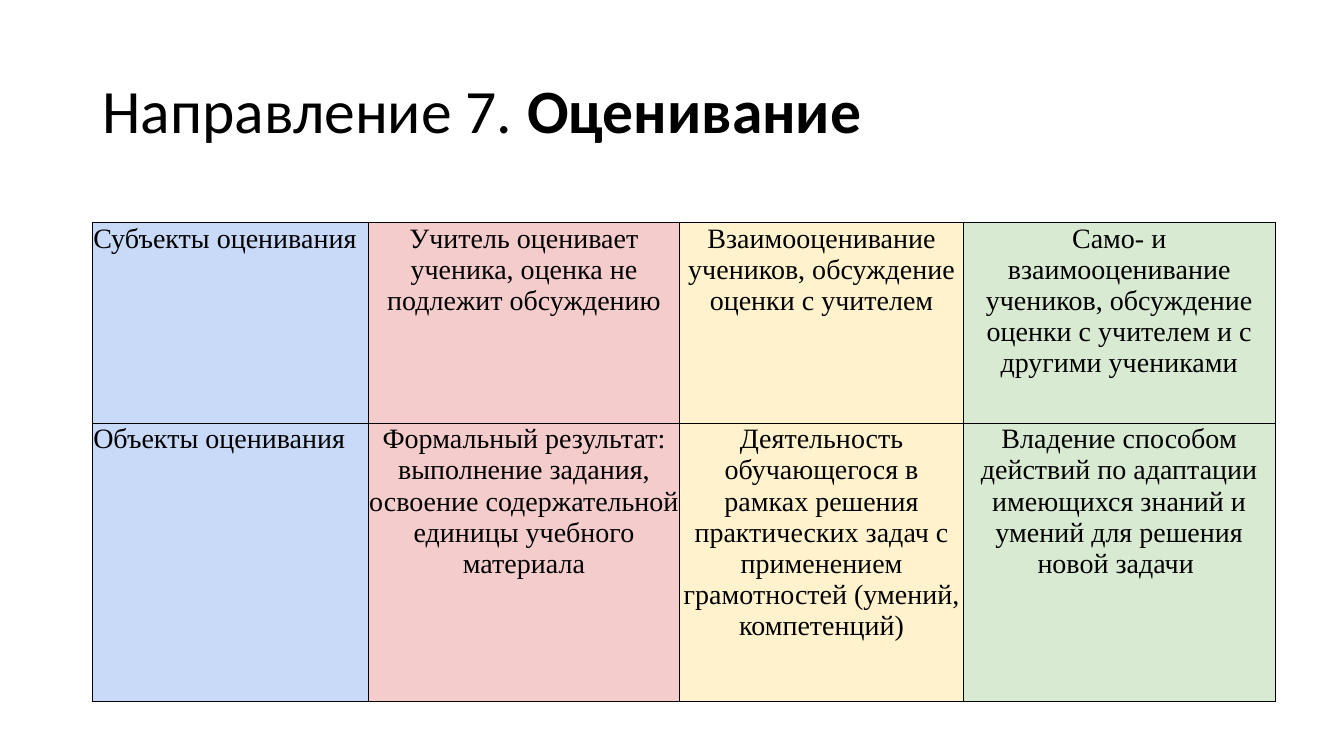
from lxml.etree import SubElement
from pptx import Presentation
from pptx.dml.color import RGBColor
from pptx.enum.text import MSO_ANCHOR, PP_ALIGN
from pptx.oxml.ns import qn
from pptx.util import Cm, Pt


def color(value):
    return RGBColor.from_string(value)


class SlideBuilder:
    title_font = "Calibri"
    table_font = "Times New Roman"
    ink = "000000"

    def __init__(self, prs):
        self.s = prs.slides.add_slide(prs.slide_layouts[6])

    def style(self, p, name, size):
        p.font.name = name
        p.font.size = Pt(size)
        p.font.color.rgb = color(self.ink)

    def title(self, box, runs):
        tf = self.s.shapes.add_textbox(*map(Cm, box)).text_frame
        tf.word_wrap = True
        tf.vertical_anchor = MSO_ANCHOR.MIDDLE
        p = tf.paragraphs[0]
        p.line_spacing = 0.9
        self.style(p, self.title_font, 44)
        for text, bold in runs:
            r = p.add_run()
            r.text = text
            r.font.bold = bold

    def border(self, cell):
        tcPr = cell._tc.get_or_add_tcPr()
        for side in ("a:lnL", "a:lnR", "a:lnT", "a:lnB"):
            ln = SubElement(tcPr, qn(side), w=str(Pt(0.5)))
            fill = SubElement(ln, qn("a:solidFill"))
            SubElement(fill, qn("a:srgbClr"), val=self.ink)

    def cell(self, cell, text, fill, align):
        self.border(cell)
        cell.fill.solid()
        cell.fill.fore_color.rgb = color(fill)
        cell.margin_left = cell.margin_right = cell.margin_top = Cm(0.02)
        cell.margin_bottom = 0
        cell.text = text
        p = cell.text_frame.paragraphs[0]
        p.alignment = align
        self.style(p, self.table_font, 20)

    def table(self, left, top, widths, heights, rows, fills):
        size = Cm(sum(widths)), Cm(sum(heights))
        table = self.s.shapes.add_table(
            len(rows), len(widths), Cm(left), Cm(top), *size).table
        table.first_row = table.horz_banding = False
        for column, width in zip(table.columns, widths):
            column.width = Cm(width)
        for row, height, texts in zip(table.rows, heights, rows):
            row.height = Cm(height)
            for i, (cell, text, fill) in enumerate(zip(row.cells, texts, fills)):
                align = PP_ALIGN.CENTER if i else PP_ALIGN.LEFT
                self.cell(cell, text, fill, align)


ASSESSMENT = [
    ["Субъекты оценивания",
     "Учитель оценивает ученика, оценка не подлежит обсуждению",
     "Взаимооценивание учеников, обсуждение оценки с учителем",
     "Само- и взаимооценивание учеников, обсуждение оценки с учителем "
     "и с другими учениками"],
    ["Объекты оценивания",
     "Формальный результат: выполнение задания, освоение содержательной "
     "единицы учебного материала",
     "Деятельность обучающегося в рамках решения практических задач "
     "с применением грамотностей (умений, компетенций)",
     "Владение способом действий по адаптации имеющихся знаний и умений "
     "для решения новой задачи "],
]


def main():
    prs = Presentation()
    prs.slide_width = Cm(33.87)
    prs.slide_height = Cm(19.05)
    slide = SlideBuilder(prs)
    slide.title((2.33, 1.01, 29.21, 3.68),
                [("Направление 7. ", False), ("Оценивание", True)])
    slide.table(2.33, 5.61, [6.95, 7.85, 7.15, 7.85], [5.05, 7.02],
                ASSESSMENT, ["C9DAF8", "F4CCCC", "FFF2CC", "D9EAD3"])
    prs.save("out.pptx")


if __name__ == "__main__":
    main()
